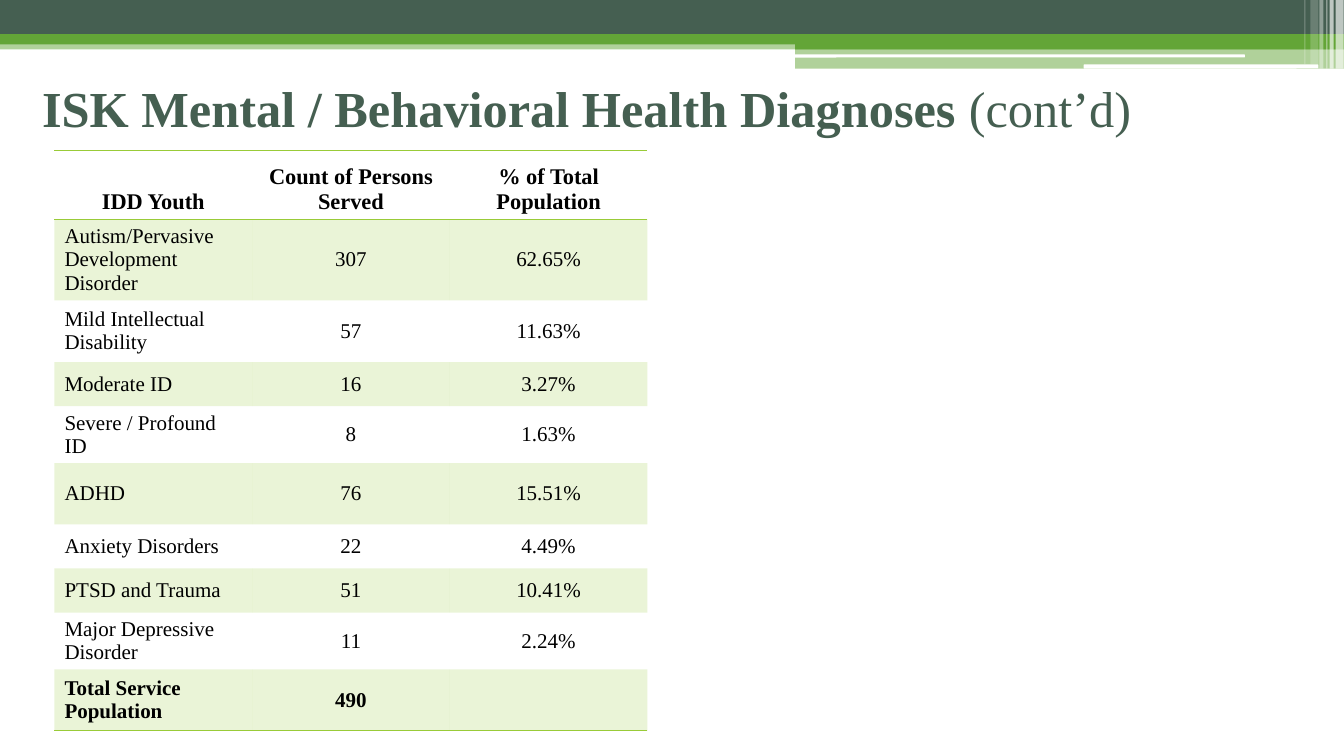
from lxml import etree
from pptx import Presentation
from pptx import util as u
from pptx.dml import color
from pptx.enum import shapes, text
from pptx.oxml import ns

COLORS = {"dark": "455F51", "green": "63A537", "lime": "99CB38", "white": "FFFFFF", "black": "000000"}
FONT = "Times New Roman"
PLAIN_TABLE = "{2D5ABB26-0587-4C30-8999-92F81FD0307C}"
RECT = shapes.MSO_SHAPE.RECTANGLE
ROUND = shapes.MSO_SHAPE.ROUNDED_RECTANGLE

BARS = [
    (RECT, 0, 28.8, 960, 6.5, "green", 50),
    (RECT, 0, 0, 960, 24.5, "dark", 100),
    (RECT, 0, 24.5, 960, 7.2, "green", 100),
    (RECT, 568, 28.1, 392, 7.2, "green", 100),
    (RECT, 568, 34.6, 392, 14.4, "green", 50),
    (ROUND, 567.4, 38.9, 321.8, 2.2, "white", 100),
    (ROUND, 774, 46.1, 167.8, 2.9, "white", 100),
]
STRIPES = [
    (954, 5.8, 49, 65), (949.7, 2.9, 49, 65), (947.5, 0.7, 49, 60),
    (942.5, 2.9, 49, 40), (936, 5.8, 46.1, 20), (931.7, 0.7, 46.1, 30),
]
TABLE_ROWS = [
    (49.3, "IDD Youth", "Count of Persons Served", "% of Total Population"),
    (56.5, "Autism/Pervasive Development Disorder", "307", "62.65%"),
    (44, "Mild Intellectual Disability", "57", "11.63%"),
    (31.5, "Moderate ID", "16", "3.27%"),
    (40.7, "Severe / Profound ID", "8", "1.63%"),
    (43.8, "ADHD", "76", "15.51%"),
    (31.5, "Anxiety Disorders", "22", "4.49%"),
    (31.5, "PTSD and Trauma", "51", "10.41%"),
    (40.7, "Major Depressive Disorder", "11", "2.24%"),
    (43.8, "Total Service Population", "490", ""),
]


def rgb(name):
    """Return the named colour as an RGBColor."""
    return color.RGBColor.from_string(COLORS[name])


def apply(target, values):
    """Set every attribute in the format dict on the target."""
    for name, value in values.items():
        setattr(target, name, value)


def paint(fill, element, name, opacity):
    """Fill solidly and make the colour as opaque as asked."""
    fill.solid()
    fill.fore_color.rgb = rgb(name)
    if opacity < 100:
        tint = element.find(ns.qn("a:solidFill")).find(ns.qn("a:srgbClr"))
        etree.SubElement(tint, ns.qn("a:alpha"), val=str(opacity * 1000))


def add_bar(slide, preset, left, top, width, height, name, opacity):
    """Add one borderless decorative bar."""
    shape = slide.shapes.add_shape(preset, *map(u.Pt, (left, top, width, height)))
    shape.shadow.inherit = False
    shape.line.fill.background()
    paint(shape.fill, shape.element.spPr, name, opacity)


def add_run(paragraph, wording, size, name, bold):
    """Append one formatted run to the paragraph."""
    run = paragraph.add_run()
    run.text = wording
    apply(run.font, {"name": FONT, "size": u.Pt(size), "bold": bold})
    run.font.color.rgb = rgb(name)


def add_title(slide):
    """Add the heading with its lighter suffix."""
    box = slide.shapes.add_textbox(*map(u.Pt, (23, 34.6, 864, 84.2)))
    apply(box.text_frame, {"word_wrap": True, "vertical_anchor": text.MSO_ANCHOR.MIDDLE})
    paragraph = box.text_frame.paragraphs[0]
    add_run(paragraph, "ISK Mental / Behavioral Health Diagnoses ", 36, "dark", True)
    add_run(paragraph, "(cont’d)", 36, "dark", False)


def add_borders(cell, sides):
    """Draw a thin lime line on each named side of the cell."""
    properties = cell._tc.get_or_add_tcPr()
    for position, side in enumerate(sides):
        line = etree.Element(ns.qn("a:ln" + side), w=str(u.Pt(1)))
        solid = etree.SubElement(line, ns.qn("a:solidFill"))
        etree.SubElement(solid, ns.qn("a:srgbClr"), val=COLORS["lime"])
        properties.insert(position, line)


def format_cell(cell, wording, row, column):
    """Write and style one cell according to its place in the table."""
    header, total = row == 0, row == len(TABLE_ROWS) - 1
    anchor = text.MSO_ANCHOR.BOTTOM if header else text.MSO_ANCHOR.MIDDLE
    margin = u.Pt(3.6 if header else 2)
    apply(cell, {"vertical_anchor": anchor, "margin_top": margin, "margin_bottom": margin})
    paragraph = cell.text_frame.paragraphs[0]
    left = column == 0 and not header
    paragraph.alignment = text.PP_ALIGN.LEFT if left else text.PP_ALIGN.CENTER
    if wording:
        add_run(paragraph, wording, 16 if header else 15, "black", header or total)
    if row % 2:
        paint(cell.fill, cell._tc.get_or_add_tcPr(), "lime", 20)
    else:
        cell.fill.background()
    add_borders(cell, "TB" if header else "B" if total else "")


def add_diagnosis_table(slide):
    """Add the table of diagnoses with banded rows."""
    heights = [height for height, *_ in TABLE_ROWS]
    bounds = map(u.Pt, (38.9, 107.3, 423.6, sum(heights)))
    table = slide.shapes.add_table(len(TABLE_ROWS), 3, *bounds).table
    apply(table, {"first_row": False, "horz_banding": False})
    table._tbl.tblPr.find(ns.qn("a:tableStyleId")).text = PLAIN_TABLE
    for row, (height, *wordings) in enumerate(TABLE_ROWS):
        table.rows[row].height = u.Pt(height)
        for column, wording in enumerate(wordings):
            format_cell(table.cell(row, column), wording, row, column)


def main():
    """Build the slide and save it."""
    presentation = Presentation()
    apply(presentation, {"slide_width": u.Pt(960), "slide_height": u.Pt(540)})
    slide = presentation.slides.add_slide(presentation.slide_layouts[6])
    for bar in BARS:
        add_bar(slide, *bar)
    for left, width, height, opacity in STRIPES:
        add_bar(slide, RECT, left, 0, width, height, "white", opacity)
    add_title(slide)
    add_diagnosis_table(slide)
    presentation.save("out.pptx")


if __name__ == "__main__":
    main()
